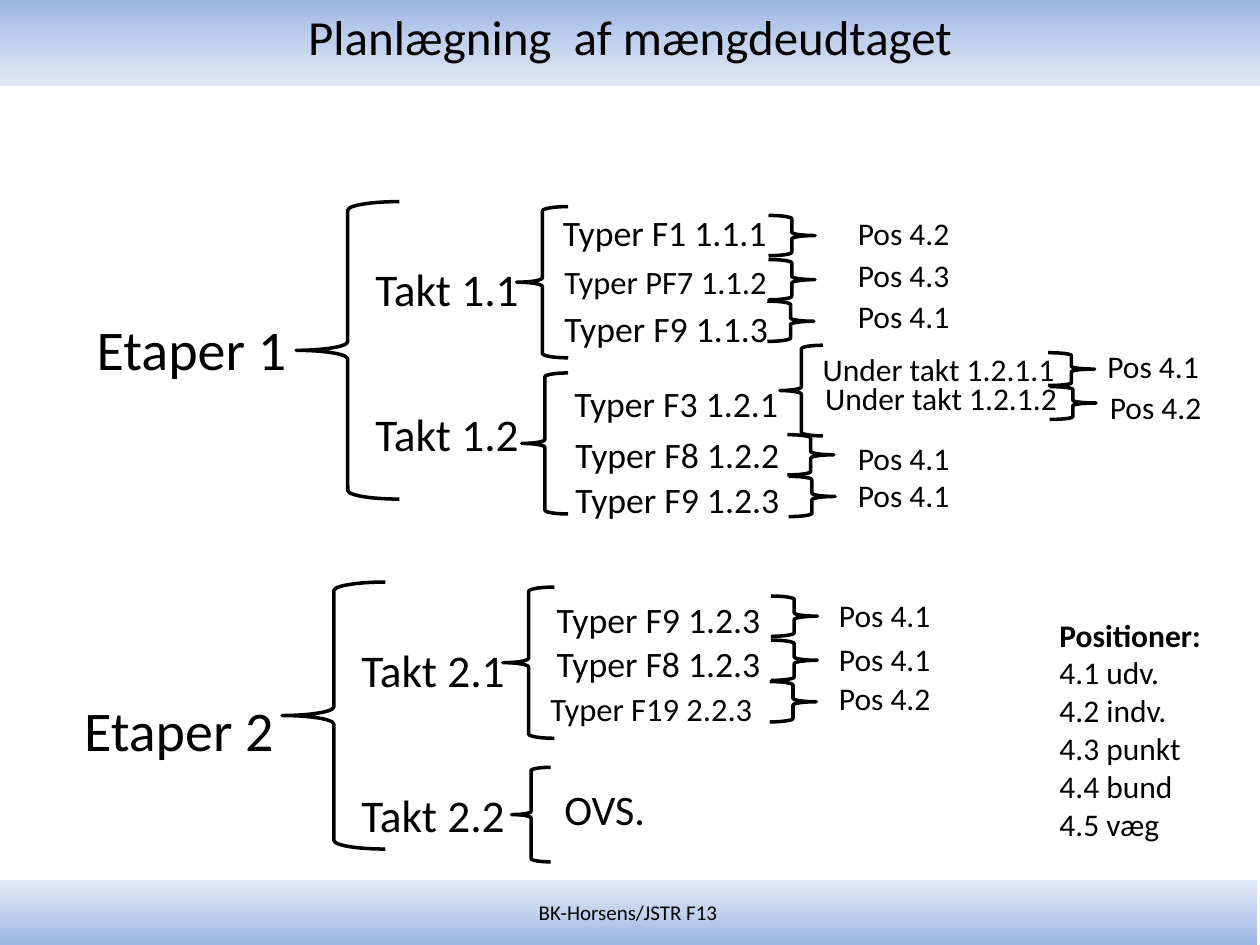
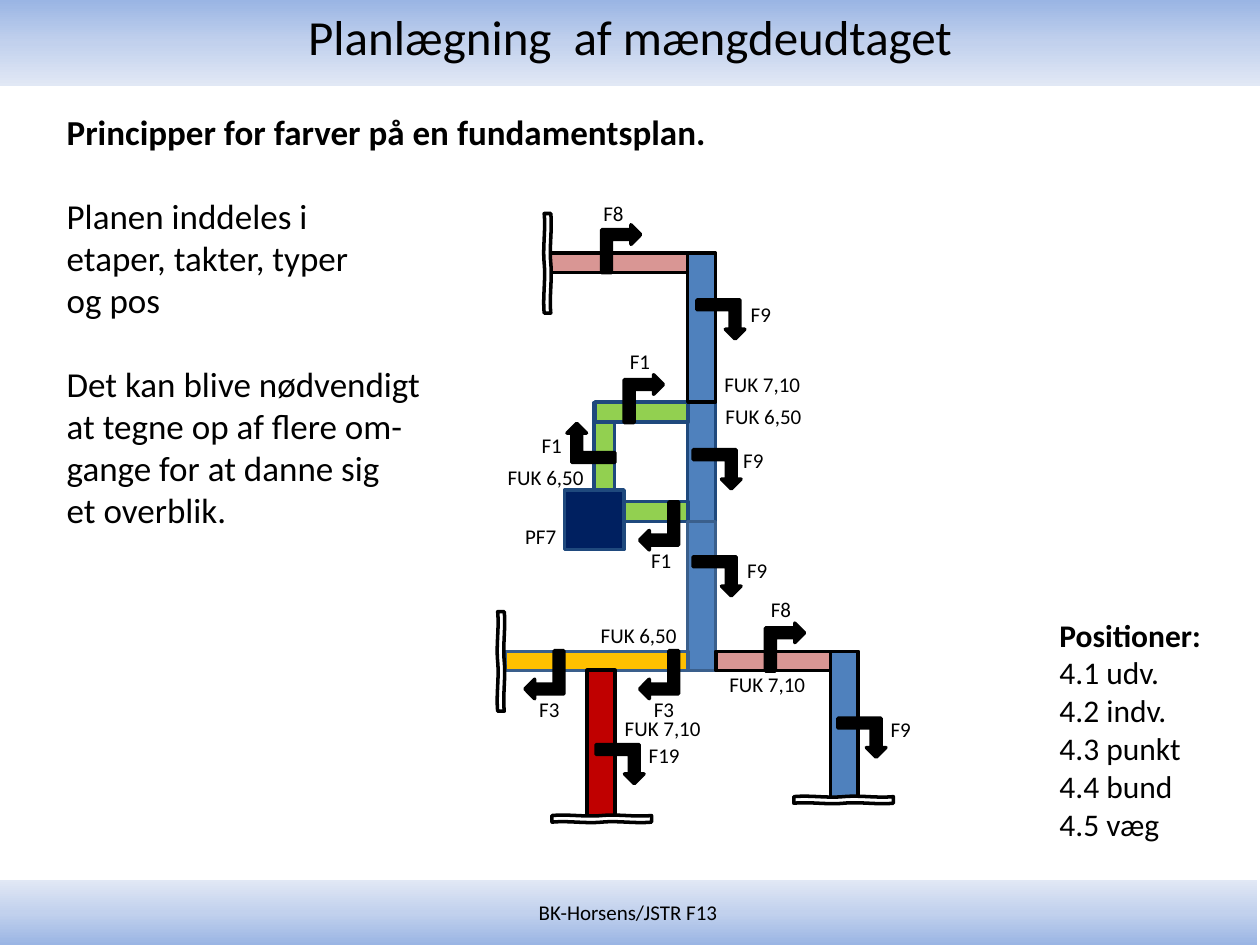
from copy import deepcopy

from pptx import Presentation
from pptx.dml.color import RGBColor
from pptx.enum import shapes, text
from pptx.oxml.ns import qn
from pptx.util import Pt

FORM = shapes.MSO_SHAPE
FONT = "Calibri"
BLACK = RGBColor(0x00, 0x00, 0x00)
WHITE = RGBColor(0xFF, 0xFF, 0xFF)
NAVY = RGBColor(0x00, 0x20, 0x60)
BLUE = RGBColor(0x4F, 0x81, 0xBD)
EDGE = RGBColor(0x1F, 0x49, 0x7D)
STEEL = RGBColor(0x3A, 0x5F, 0x8C)
GREEN = RGBColor(0x92, 0xD0, 0x50)
PINK = RGBColor(0xD9, 0x96, 0x94)
AMBER = RGBColor(0xFF, 0xC0, 0x00)
RED = RGBColor(0xC0, 0x00, 0x00)
SHADES = [
    (0, RGBColor(0x9A, 0xB5, 0xE4)),
    (0.5, RGBColor(0xC2, 0xD1, 0xED)),
    (1, RGBColor(0xE1, 0xE8, 0xF5)),
]

# Label kinds: width, height, font size
STAGE = (164, 101.5, 32)
TAKT = (102, 57.6, 25.9)
TYPE = (136, 34, 20.4)
LONG = (136, 36, 18.6)
OPEN = (136, 35, 24)
SUB = (157.7, 27.4, 18)
POS = (83.5, 27.4, 18)
MARK = (35.3, 19.4, 12)
LEVEL = (64.8, 15.8, 12)

# Label rows: kind, left, middle, words
TREE = [
    (STAGE, 48.2, 199.1, "Etaper 1"),
    (TAKT, 207.4, 164.9, "Takt 1.1"),
    (TYPE, 314.6, 132.8, "Typer F1 1.1.1"),
    (LONG, 315.4, 160.6, "Typer PF7 1.1.2"),
    (TYPE, 315.4, 187.6, "Typer F9 1.1.3"),
    (TAKT, 207.4, 247.7, "Takt 1.2"),
    (TYPE, 321.1, 230.4, "Typer F3 1.2.1"),
    (SUB, 463, 211, "Under takt 1.2.1.1"),
    (SUB, 464.4, 227.5, "Under takt 1.2.1.2"),
    (TYPE, 321.8, 259.6, "Typer F8 1.2.2"),
    (TYPE, 321.8, 285.5, "Typer F9 1.2.3"),
    (STAGE, 41, 416.5, "Etaper 2"),
    (TAKT, 199.4, 382.3, "Takt 2.1"),
    (TYPE, 311, 353.9, "Typer F9 1.2.3"),
    (TYPE, 311, 379.1, "Typer F8 1.2.3"),
    (LONG, 307.4, 405, "Typer F19 2.2.3"),
    (TAKT, 199.4, 465.1, "Takt 2.2"),
    (OPEN, 315.4, 461.9, "OVS."),
    (POS, 483.1, 133.2, "Pos 4.2"),
    (POS, 483.1, 157, "Pos 4.3"),
    (POS, 483.1, 180.7, "Pos 4.1"),
    (POS, 625.7, 208.8, "Pos 4.1"),
    (POS, 627.1, 232.6, "Pos 4.2"),
    (POS, 483.1, 261.4, "Pos 4.1"),
    (POS, 483.1, 283, "Pos 4.1"),
    (POS, 472.3, 351.4, "Pos 4.1"),
    (POS, 472.3, 376.6, "Pos 4.1"),
    (POS, 472.3, 398.9, "Pos 4.2"),
]
SPLITS = [
    (169.2, 115.2, 59, 170),
    (295.2, 118.1, 29.5, 86.4),
    (298.1, 213.1, 26.6, 80.6),
    (445.7, 197.3, 24.5, 51.8),
    (161.3, 332.6, 59, 152.6),
    (287.3, 335.5, 29.5, 86.4),
    (292.3, 438.5, 22.3, 54),
]
# Closing braces: left, top, height
JOINS = [
    (439.2, 123.1, 23), (439.2, 148.3, 23), (438.5, 172.1, 23),
    (599, 201.6, 18.7), (599.8, 221, 18.7),
    (450, 248.4, 23), (450.7, 272.2, 23),
    (440.6, 340.6, 23), (440.6, 365.8, 23), (439.9, 389.5, 23),
]

# Beams of the plan: left, top, width, height, fill, line
BEAMS = [
    (339.6, 230, 11.5, 67, GREEN, EDGE),
    (393, 230, 16, 68.4, BLUE, EDGE),
    (340, 229.7, 53.3, 11.5, GREEN, EDGE),
    (340, 286.6, 53.3, 11.5, GREEN, EDGE),
    (322.6, 280, 34, 34, NAVY, EDGE),
    (393, 144.7, 16, 85, BLUE, BLACK),
    (393, 298.1, 16, 85, BLUE, STEEL),
    (314, 144.7, 79, 11, PINK, BLACK),
    (409, 372.2, 79, 11, PINK, BLACK),
    (474.5, 372.2, 16, 85, BLUE, BLACK),
    (288.7, 372.2, 104.4, 11, AMBER, STEEL),
    (335.5, 383, 16, 85, RED, BLACK),
]
# Section arrows by turn: left, top
ARROWS = {
    0: [(324, 241.9)],
    90: [(354.2, 216.7), (341.3, 131), (434.9, 358.6)],
    180: [(396, 318.2), (396, 257), (398.2, 171.4), (478.8, 410.4),
          (340.6, 425.5)],
    270: [(362.9, 289.4), (297.4, 374.4), (362.9, 374.4)],
}
WAVES = [
    (284.4, 148.3, 90), (257.8, 375.8, 90), (453.6, 455, 0), (315.4, 465.8, 0),
]
MARKS = [
    (MARK, 293, 306.4, "PF7"),
    (MARK, 337.7, 122, "F8"),
    (MARK, 433.4, 348.1, "F8"),
    (MARK, 352.8, 206.3, "F1"),
    (MARK, 365, 320, "F1"),
    (MARK, 302.4, 254.5, "F1"),
    (MARK, 421.9, 179.6, "F9"),
    (MARK, 419.8, 325.8, "F9"),
    (MARK, 417.6, 263.2, "F9"),
    (MARK, 501.8, 416.5, "F9"),
    (MARK, 363.6, 431.6, "F19"),
    (MARK, 366.5, 405, "F3"),
    (MARK, 301, 405, "F3"),
    (LEVEL, 283, 272.9, "FUK 6,50"),
    (LEVEL, 407.5, 237.6, "FUK 6,50"),
    (LEVEL, 336.2, 362.9, "FUK 6,50"),
    (LEVEL, 406.8, 219.6, "FUK 7,10"),
    (LEVEL, 409.7, 391, "FUK 7,10"),
    (LEVEL, 349.9, 416.2, "FUK 7,10"),
]
GUIDE = [
    "Principper for farver på en fundamentsplan.",
    "Planen inddeles i\vetaper, takter, typer\vog pos",
    "Det kan blive nødvendigt\vat tegne op af flere om-\v"
    "gange for at danne sig\vet overblik.",
]
LEGEND = ["Positioner:", "4.1 udv.", "4.2 indv.", "4.3 punkt", "4.4 bund",
          "4.5 væg"]


def write(shape, lines, size, align=text.PP_ALIGN.LEFT,
          anchor=text.MSO_ANCHOR.MIDDLE, head=False, gap=0):
    """Fill a shape with paragraphs; head makes the first one bold."""
    frame = shape.text_frame
    frame.word_wrap = True
    frame.vertical_anchor = anchor
    for i, line in enumerate(lines):
        par = frame.add_paragraph() if i else frame.paragraphs[0]
        par.text = line
        par.alignment = align
        par.font.name = FONT
        par.font.size = Pt(size)
        par.font.color.rgb = BLACK
        par.font.bold = head and i == 0
        if i and gap:
            par.space_before = Pt(gap)


def add_box(slide, x, y, w, h, lines, size, **style):
    box = slide.shapes.add_textbox(Pt(x), Pt(y), Pt(w), Pt(h))
    write(box, lines, size, **style)


def add_labels(slide, rows):
    for (w, h, size), x, mid, words in rows:
        add_box(slide, x, mid - h / 2, w, h, [words], size)


def add_form(slide, form, x, y, w, h, fill=None, line=BLACK, turn=0,
             flip=False):
    shape = slide.shapes.add_shape(form, Pt(x), Pt(y), Pt(w), Pt(h))
    shape.shadow.inherit = False
    shape.rotation = turn
    if fill is None:
        shape.fill.background()
    else:
        shape.fill.solid()
        shape.fill.fore_color.rgb = fill
    if line is None:
        shape.line.fill.background()
    else:
        shape.line.color.rgb = line
        shape.line.width = Pt(2)
    if flip:
        shape._element.spPr.xfrm.set("flipH", "1")
    return shape


def add_band(slide, x, y, h, angle):
    """Add a full-width band shaded in three steps."""
    band = add_form(slide, FORM.RECTANGLE, x, y, 720, h, line=None)
    band.fill.gradient()
    band.fill.gradient_angle = angle
    stops = band._element.spPr.find(qn("a:gradFill")).find(qn("a:gsLst"))
    stops.insert(1, deepcopy(stops[0]))
    for stop, (place, shade) in zip(band.fill.gradient_stops, SHADES):
        stop.position = place
        stop.color.rgb = shade
    return band


def add_page(deck):
    """Add a slide with the title band, footer and legend."""
    slide = deck.slides.add_slide(deck.slide_layouts[6])
    mid = text.PP_ALIGN.CENTER
    top = add_band(slide, 0, 0, 49, 270)
    write(top, ["Planlægning  af mængdeudtaget"], 28, align=mid,
          anchor=text.MSO_ANCHOR.TOP)
    add_band(slide, -1.4, 502.6, 37.4, 90)
    add_box(slide, 244.8, 506.9, 228.2, 28.8, ["BK-Horsens/JSTR F13"], 12,
            align=mid)
    add_box(slide, 598.3, 353.5, 96.5, 126, LEGEND, 18, head=True)
    return slide


def add_tree(slide):
    add_labels(slide, TREE)
    for area in SPLITS:
        add_form(slide, FORM.LEFT_BRACE, *area)
    for x, y, h in JOINS:
        add_form(slide, FORM.LEFT_BRACE, x, y, 26.6, h, flip=True)


def add_plan(slide):
    for beam in BEAMS:
        add_form(slide, FORM.RECTANGLE, *beam)
    for turn, spots in ARROWS.items():
        for x, y in spots:
            add_form(slide, FORM.BENT_UP_ARROW, x, y, 27.4, 22.3, BLACK,
                     turn=turn, flip=True)
    for x, y, turn in WAVES:
        add_form(slide, FORM.DOUBLE_WAVE, x, y, 56.9, 4.3, WHITE, turn=turn)
    add_labels(slide, MARKS)


def main():
    deck = Presentation()
    deck.slide_width, deck.slide_height = Pt(720), Pt(540)
    add_tree(add_page(deck))
    slide = add_page(deck)
    add_box(slide, 31, 59.8, 380.9, 324, GUIDE, 20, head=True, gap=24,
            anchor=text.MSO_ANCHOR.TOP)
    add_plan(slide)
    deck.save("out.pptx")


if __name__ == "__main__":
    main()
